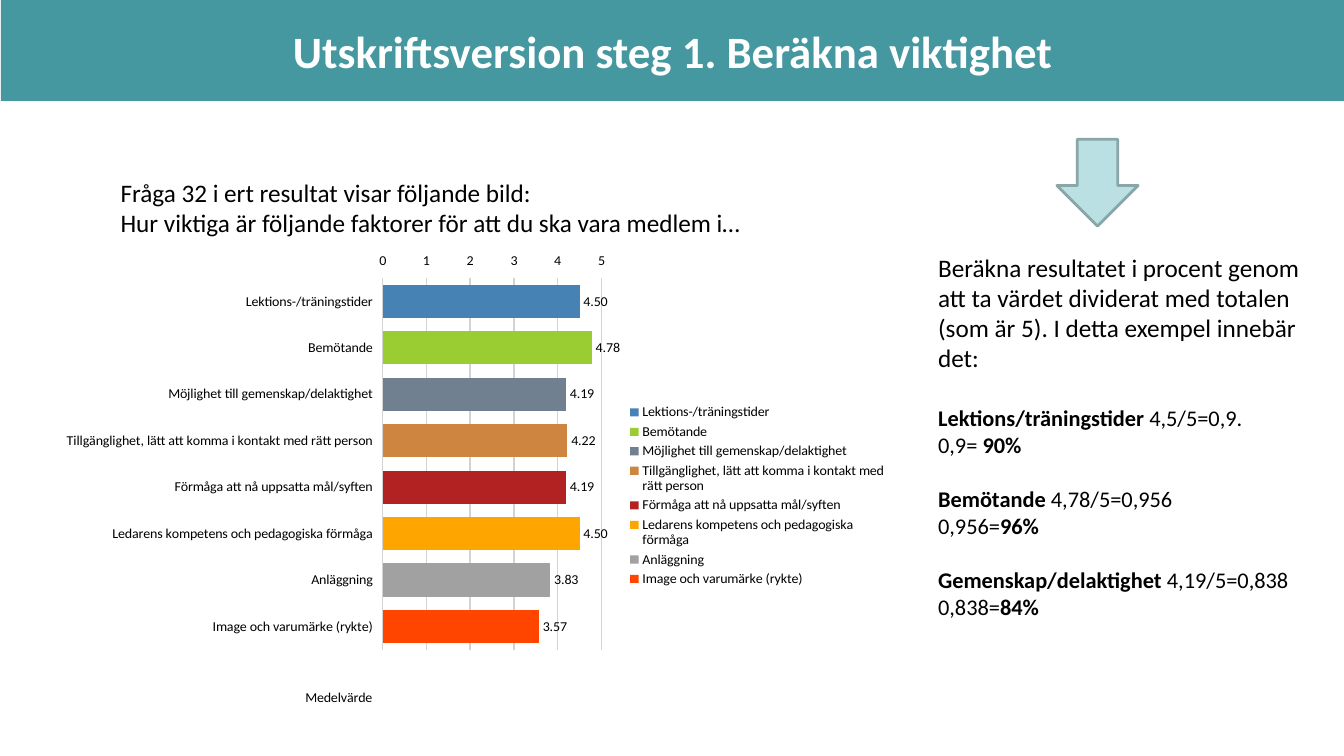
import pptx
import pptx.chart.data
import pptx.dml.color
import pptx.enum.chart
import pptx.enum.shapes
import pptx.enum.text
import pptx.oxml
import pptx.oxml.ns
import pptx.util

Pt = pptx.util.Pt
FONT = "Calibri"

FACTORS = [
    ("Lektions-/träningstider", 4.5, "4682B4"),
    ("Bemötande", 4.78, "9ACD32"),
    ("Möjlighet till gemenskap/delaktighet", 4.19, "708090"),
    ("Tillgänglighet, lätt att komma i kontakt med rätt person", 4.22, "CD853F"),
    ("Förmåga att nå uppsatta mål/syften", 4.19, "B22222"),
    ("Ledarens kompetens och pedagogiska förmåga", 4.5, "FFA500"),
    ("Anläggning", 3.83, "A1A1A1"),
    ("Image och varumärke (rykte)", 3.57, "FF4500"),
]

# Each paragraph: size, space before, runs of (text, bold)
QUESTION = [
    (18, 0, [("Fråga 32 i ert resultat visar följande bild:", False)]),
    (18, 0, [("Hur viktiga är följande faktorer för att du ska vara medlem i…", False)]),
]
CALCULATION = [
    (18, 0, [("Beräkna resultatet i procent genom att ta värdet dividerat med totalen "
              "(som är 5). I detta exempel innebär det:", False)]),
    (16, 22, [("Lektions/träningstider ", True), ("4,5/5=0,9.", False)]),
    (16, 0, [("0,9= ", False), ("90%", True)]),
    (16, 19.5, [("Bemötande", True), (" 4,78/5=0,956", False)]),
    (16, 0, [("0,956=", False), ("96%", True)]),
    (16, 19.5, [("Gemenskap/delaktighet ", True), ("4,19/5=0,838 0,838=", False),
                ("84%", True)]),
]


def rgb(hex_colour):
    return pptx.dml.color.RGBColor.from_string(hex_colour)


def fill_solid(fill, colour):
    fill.solid()
    fill.fore_color.rgb = rgb(colour)


def style_font(font, size, colour="000000", bold=False):
    font.name = FONT
    font.size = Pt(size)
    font.bold = bold
    font.color.rgb = rgb(colour)


def add_title(slide, text):
    title = slide.shapes.title
    title.left, title.top, title.width, title.height = Pt(0.7), Pt(0), Pt(960), Pt(72)
    fill_solid(title.fill, "4597A0")
    frame = title.text_frame
    frame.auto_size = pptx.enum.text.MSO_AUTO_SIZE.NONE
    frame.vertical_anchor = pptx.enum.text.MSO_ANCHOR.MIDDLE
    paragraph = frame.paragraphs[0]
    paragraph.alignment = pptx.enum.text.PP_ALIGN.CENTER
    run = paragraph.add_run()
    run.text = text
    style_font(run.font, 32, "FFFFFF", True)


def add_text(slide, left, top, width, height, paragraphs):
    frame = slide.shapes.add_textbox(Pt(left), Pt(top), Pt(width), Pt(height)).text_frame
    frame.word_wrap = True
    for index, (size, space_before, runs) in enumerate(paragraphs):
        paragraph = frame.add_paragraph() if index else frame.paragraphs[0]
        paragraph.space_before = Pt(space_before)
        for text, bold in runs:
            run = paragraph.add_run()
            run.text = text
            style_font(run.font, size, bold=bold)


def add_down_arrow(slide, left, top, width, height):
    arrow = slide.shapes.add_shape(pptx.enum.shapes.MSO_SHAPE.DOWN_ARROW,
                                   Pt(left), Pt(top), Pt(width), Pt(height))
    arrow.shadow.inherit = False
    fill_solid(arrow.fill, "BBE0E3")
    arrow.line.color.rgb = rgb("8AA6A8")
    arrow.line.width = Pt(2)


def place_chart_part(part, index, inner=False, **fractions):
    """Give a chart part a manual layout, as fractions of the chart's size."""
    qn = pptx.oxml.ns.qn
    for layout in part.findall(qn("c:layout")):
        part.remove(layout)
    settings = '<c:layoutTarget val="inner"/>' if inner else ""
    settings += "".join(f'<c:{key}Mode val="edge"/>' for key in "xy")
    settings += "".join(f'<c:{key} val="{value}"/>' for key, value in fractions.items())
    part.insert(index, pptx.oxml.parse_xml(
        f'<c:layout {pptx.oxml.ns.nsdecls("c")}>'
        f"<c:manualLayout>{settings}</c:manualLayout></c:layout>"))


def format_axes(chart):
    factor_axis, mean_axis = chart.category_axis, chart.value_axis
    for axis in (factor_axis, mean_axis):
        axis.format.line.fill.background()
        axis.major_tick_mark = pptx.enum.chart.XL_TICK_MARK.OUTSIDE
        style_font(axis.tick_labels.font, 10)
    factor_axis.reverse_order = True
    factor_axis.crosses = pptx.enum.chart.XL_AXIS_CROSSES.MAXIMUM
    mean_axis.minimum_scale, mean_axis.maximum_scale, mean_axis.major_unit = 0, 5, 1
    mean_axis.tick_labels.number_format = "General"
    mean_axis.tick_labels.number_format_is_linked = False
    gridline = mean_axis.major_gridlines.format.line
    gridline.color.rgb = rgb("D3D3D3")
    gridline.width = Pt(1)
    run = mean_axis.axis_title.text_frame.paragraphs[0].add_run()
    run.text = "Medelvärde"
    style_font(run.font, 10)


def add_importance_chart(slide, left, top, width, height):
    names, means, colours = zip(*FACTORS)
    data = pptx.chart.data.CategoryChartData()
    data.categories = names
    data.add_series("Column02", means)
    chart = slide.shapes.add_chart(pptx.enum.chart.XL_CHART_TYPE.BAR_CLUSTERED,
                                   Pt(left), Pt(top), Pt(width), Pt(height), data).chart
    style_font(chart.font, 10)
    chart.has_title = False
    format_axes(chart)

    plot = chart.plots[0]
    plot.gap_width = 40
    plot.vary_by_categories = True
    bars = plot.series[0]
    fill_solid(bars.format.fill, colours[0])
    for index, colour in enumerate(colours):
        fill_solid(bars.points[index].format.fill, colour)
    labels = bars.data_labels
    labels.show_value = True
    labels.number_format = "0.00"
    labels.number_format_is_linked = False
    labels.position = pptx.enum.chart.XL_LABEL_POSITION.OUTSIDE_END
    style_font(labels.font, 10)

    chart.has_legend = True
    chart.legend.position = pptx.enum.chart.XL_LEGEND_POSITION.RIGHT
    chart.legend.include_in_layout = False
    style_font(chart.legend.font, 10)

    mean_axis = chart.value_axis
    place_chart_part(mean_axis._element.getparent(), 0, inner=True,
                     x=0.395, y=0.02, w=0.26, h=0.82)
    place_chart_part(mean_axis.axis_title._element, 1, x=0.3, y=0.92)
    place_chart_part(chart.legend._element, 1, x=0.68, y=0.29, w=0.32, h=0.42)


def main():
    presentation = pptx.Presentation()
    presentation.slide_width, presentation.slide_height = Pt(960), Pt(540)
    slide = presentation.slides.add_slide(presentation.slide_layouts[5])
    add_title(slide, "Utskriftsversion steg 1. Beräkna viktighet")
    add_text(slide, 79, 123, 835, 51, QUESTION)
    add_importance_chart(slide, 36, 181, 601, 335)
    add_text(slide, 663, 176.5, 273, 310, CALCULATION)
    add_down_arrow(slide, 755, 99.5, 58, 62)
    presentation.save("out.pptx")


if __name__ == "__main__":
    main()
